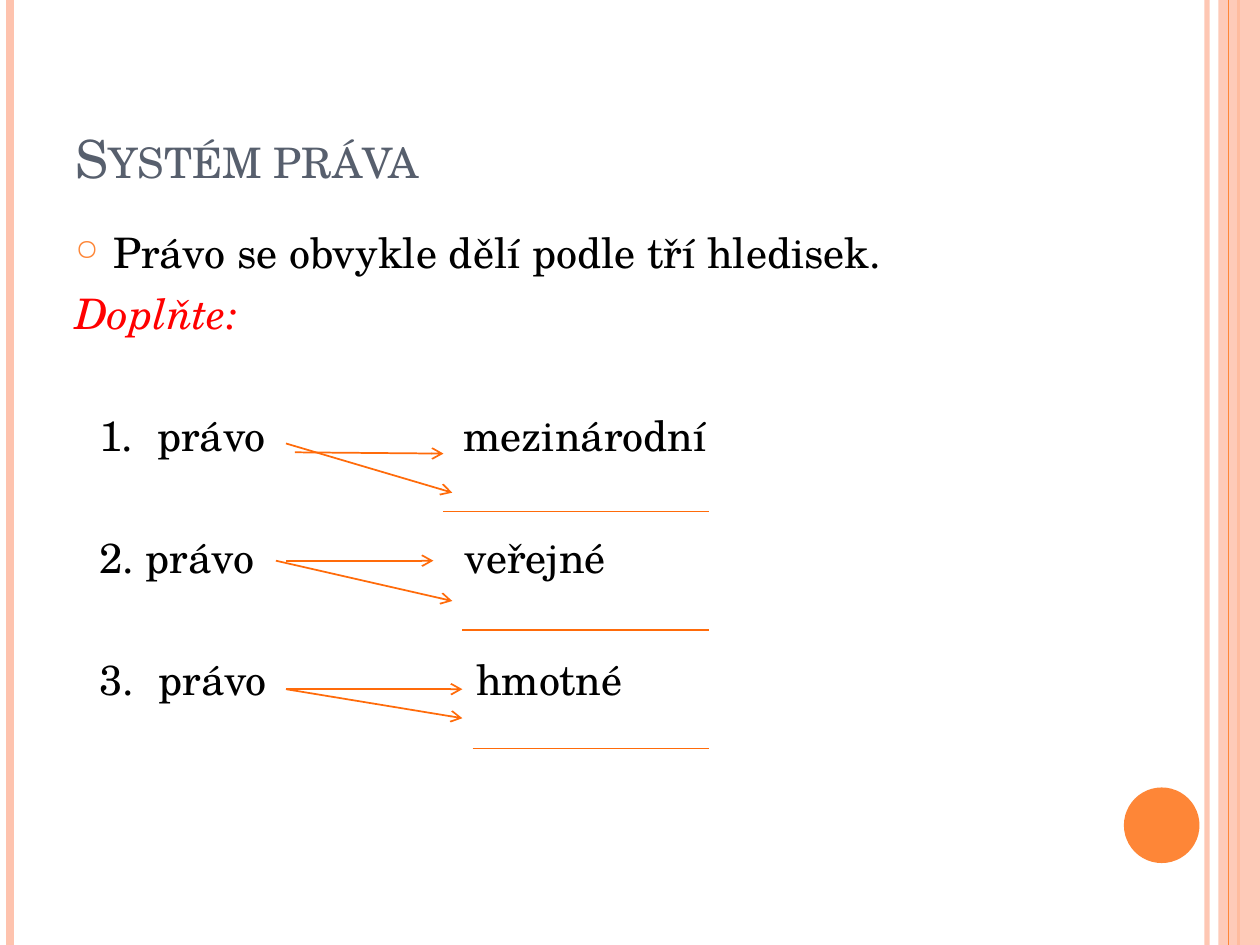
from lxml.etree import SubElement
from pptx import Presentation
from pptx.dml.color import RGBColor
from pptx.enum.shapes import MSO_CONNECTOR, MSO_SHAPE
from pptx.enum.text import MSO_ANCHOR
from pptx.oxml.ns import qn
from pptx.util import Inches, Pt

FONT = "TeX Gyre Schola"
PEACH, ORANGE, ARROW = "FEC3AE", "FE8637", "FF6B0A"
BLACK, RED, SLATE = "000000", "FF0000", "575F6D"
ROW_GAP = 40.9

ROWS = [
    ("1.", "právo", "mezinárodní", (0.19, 0.65, 3.08)),
    ("2.", "právo", "veřejné", (0.19, 0.56, 3.09)),
    ("3.", "právo", "hmotné", (0.19, 0.66, 3.18)),
]
BLANKS = [(3.52, 4.06), (3.67, 5), (3.75, 5.94)]
BLANK_RIGHT = 5.63
ARROWS = [
    ((2.34, 3.59), (3.52, 3.6)),
    ((2.27, 3.52), (3.59, 3.91)),
    ((2.27, 4.45), (3.44, 4.45)),
    ((2.19, 4.45), (3.59, 4.77)),
    ((2.27, 5.47), (3.67, 5.47)),
    ((2.27, 5.47), (3.67, 5.7)),
]


def color(value):
    return RGBColor.from_string(value)


def set_alpha(fill, percent):
    element = fill._xPr.find(qn("a:solidFill"))[0]
    SubElement(element, qn("a:alpha")).set("val", str(percent * 1000))


def add_line(slide, start, end, value, width, alpha=100, arrow=False):
    points = [Inches(number) for number in (*start, *end)]
    connector = slide.shapes.add_connector(MSO_CONNECTOR.STRAIGHT, *points)
    connector.line.fill.solid()
    connector.line.color.rgb = color(value)
    connector.line.width = Pt(width)
    if alpha < 100:
        set_alpha(connector.line.fill, alpha)
    if arrow:
        line = connector.line._get_or_add_ln()
        SubElement(line, qn("a:tailEnd")).set("type", "arrow")
    SubElement(connector._element.spPr, qn("a:effectLst"))


def add_figure(slide, kind, left, top, width, height, value, alpha=100):
    shape = slide.shapes.add_shape(
        kind, Inches(left), Inches(top), Inches(width), Inches(height))
    shape.shadow.inherit = False
    shape.fill.solid()
    shape.fill.fore_color.rgb = color(value)
    shape.line.fill.background()
    if alpha < 100:
        set_alpha(shape.fill, alpha)


def add_box(slide, top, height, anchor):
    box = slide.shapes.add_textbox(
        Inches(0.5), Inches(top), Inches(8.17), Inches(height))
    frame = box.text_frame
    frame.word_wrap = True
    frame.vertical_anchor = anchor
    return frame


def add_run(para, text, size, value, italic=False):
    span = para.add_run()
    span.text = text
    span.font.name = FONT
    span.font.size = Pt(size)
    span.font.color.rgb = color(value)
    span.font.italic = italic
    return span


def set_bullet(para):
    properties = para._p.get_or_add_pPr()
    properties.set("marL", str(Inches(0.3)))
    properties.set("indent", str(Inches(-0.3)))
    bullet_color = SubElement(properties, qn("a:buClr"))
    SubElement(bullet_color, qn("a:srgbClr")).set("val", ORANGE)
    SubElement(properties, qn("a:buSzPct")).set("val", "70000")
    SubElement(properties, qn("a:buChar")).set("char", "○")


def set_tabs(para, stops):
    tab_list = SubElement(para._p.get_or_add_pPr(), qn("a:tabLst"))
    for stop in stops:
        tab = SubElement(tab_list, qn("a:tab"))
        tab.set("pos", str(Inches(stop)))
        tab.set("algn", "l")


def add_frame_decoration(slide):
    for x, value, width, alpha in [
        (9.58, PEACH, 3, 93), (0.08, PEACH, 4.5, 100), (9.83, ORANGE, 1.5, 100),
    ]:
        add_line(slide, (x, 0), (x, 7.5), value, width, alpha)
    add_figure(slide, MSO_SHAPE.RECTANGLE, 9.67, 0, 0.33, 7.5, PEACH, 87)
    add_line(slide, (9.75, 0), (9.75, 7.5), ORANGE, 0.75)
    add_figure(slide, MSO_SHAPE.OVAL, 8.92, 6.25, 0.6, 0.6, ORANGE)


def add_title(slide):
    frame = add_box(slide, 0.3, 1.25, MSO_ANCHOR.BOTTOM)
    span = add_run(frame.paragraphs[0], "Systém práva", 30, SLATE)
    span.font._element.set("cap", "small")


def add_body(slide):
    frame = add_box(slide, 1.75, 5.33, MSO_ANCHOR.TOP)
    intro = frame.paragraphs[0]
    intro.space_before = Pt(6)
    set_bullet(intro)
    add_run(intro, "Právo se obvykle dělí podle tří hledisek.", 24, BLACK)
    task = frame.add_paragraph()
    task.space_before = Pt(6)
    add_run(task, "Doplňte:", 24, RED, italic=True)
    for number, subject, term, stops in ROWS:
        para = frame.add_paragraph()
        para.space_before = Pt(ROW_GAP)
        set_tabs(para, stops)
        add_run(para, f"\t{number}\t{subject}\t{term}", 24, BLACK)


def main():
    deck = Presentation()
    deck.slide_width, deck.slide_height = Inches(10), Inches(7.5)
    slide = deck.slides.add_slide(deck.slide_layouts[6])
    add_frame_decoration(slide)
    add_title(slide)
    add_body(slide)
    for left, y in BLANKS:
        add_line(slide, (left, y), (BLANK_RIGHT, y), ARROW, 1)
    for start, end in ARROWS:
        add_line(slide, start, end, ARROW, 1, arrow=True)
    deck.save("out.pptx")


if __name__ == "__main__":
    main()
